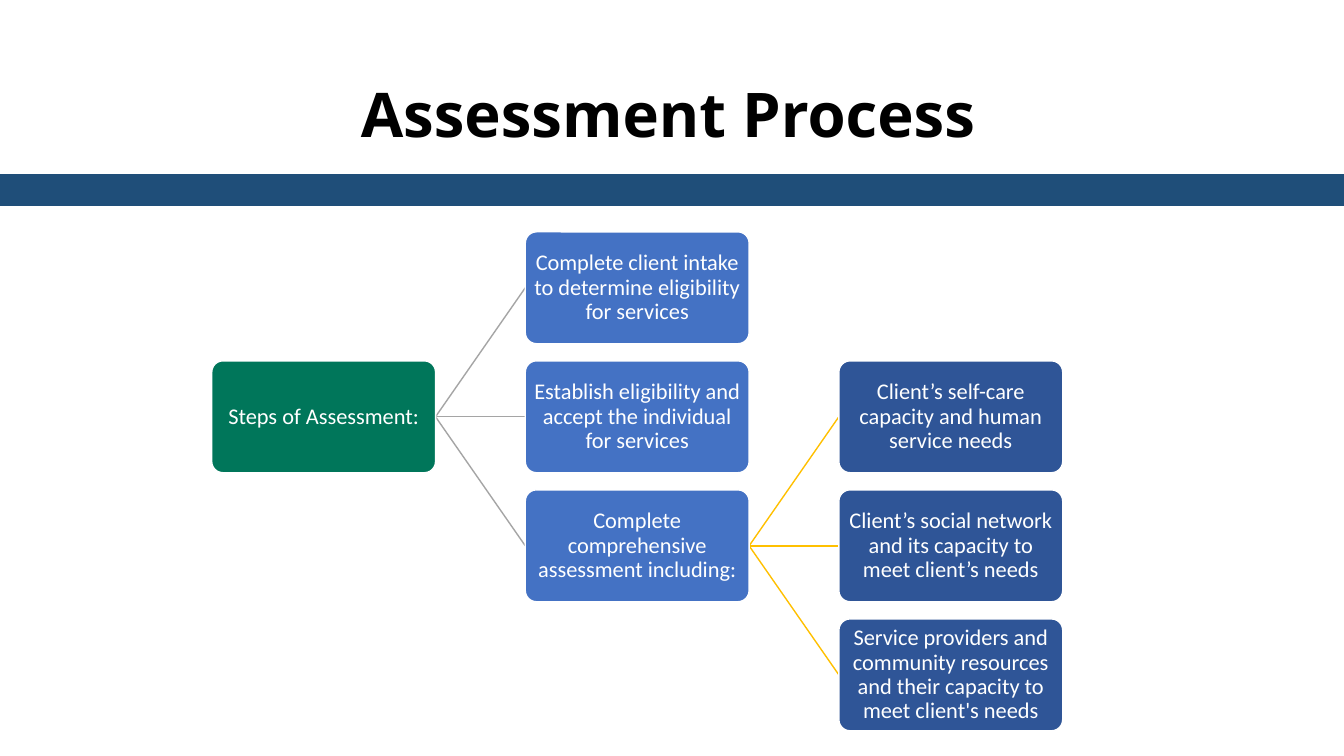
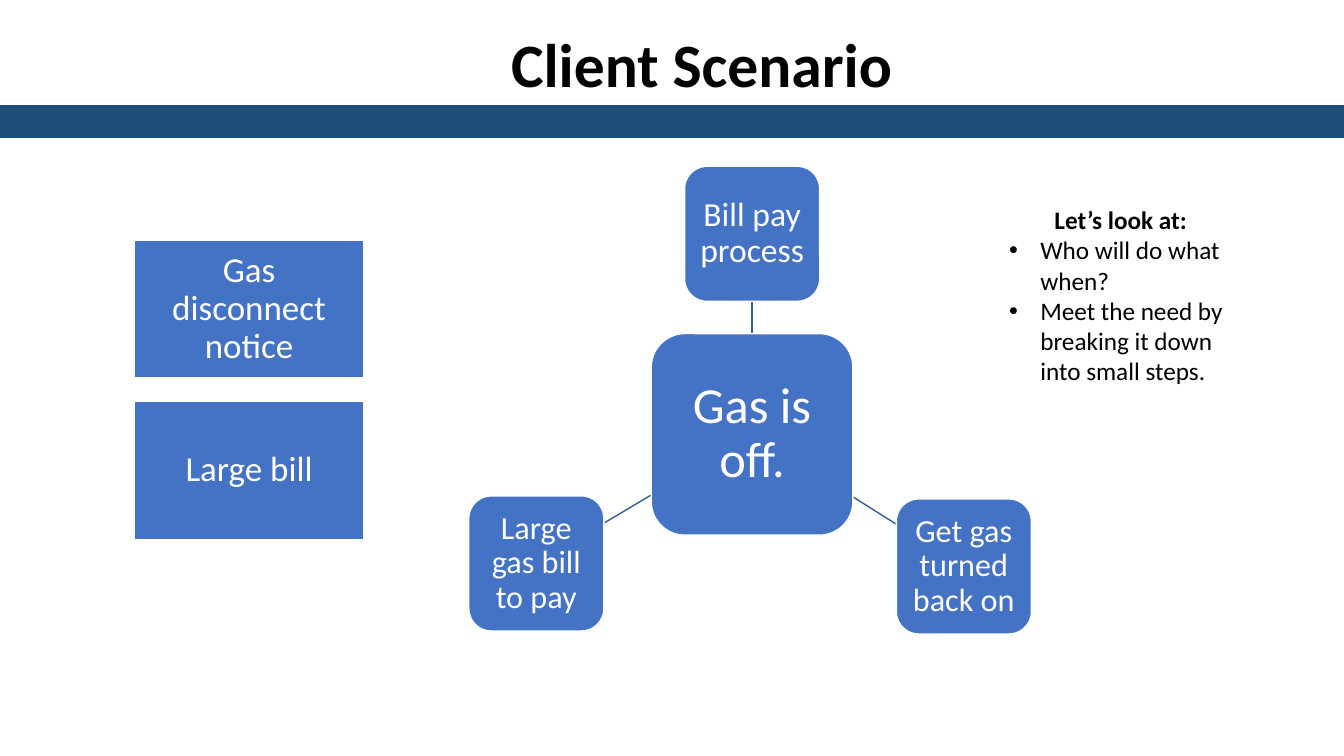
from pptx import Presentation
from pptx.dml.color import RGBColor
from pptx.enum.shapes import MSO_CONNECTOR as Connector, MSO_SHAPE as Preset
from pptx.enum.text import MSO_ANCHOR as Anchor, PP_ALIGN as Align
from pptx.oxml.ns import qn
from pptx.util import Pt
from lxml.etree import SubElement

PX = 9144
SLIDE_WIDTH, SLIDE_HEIGHT = 1333, 750
BAND_HEIGHT = 31
COLORS = {
    "band": "1F4E79", "root": "00765A", "step": "4472C4", "detail": "2F5597",
    "root_link": "A5A5A5", "step_link": "FFC000", "hub_link": "365B9D",
    "white": "FFFFFF", "black": "000000",
}

PROCESS = {"title": "Assessment Process", "font": "Open Sans", "box": (348, 70, 638, 84), "band": 173}
SCENARIO = {"title": "Client Scenario", "font": "Calibri", "box": (497, 21, 431, 84), "band": 105}

TREE_LEFT, TREE_TOP = 210, 230
COLUMN_STEP, ROW_STEP = 311, 128
NODE_WIDTH, NODE_HEIGHT = 222, 111
TREE = [
    ("root", 1, ["Steps of Assessment:"]),
    ("step", 0, ["Complete client intake to determine eligibility for services",
                 "Establish eligibility and accept the individual for services",
                 "Complete comprehensive assessment including:"]),
    ("detail", 1, ["Client’s self-care capacity and human service needs",
                   "Client’s social network and its capacity to meet client’s needs",
                   "Service providers and community resources and their capacity to meet client's needs"]),
]
TREE_LINKS = [("root_link", (0, 1), 1), ("step_link", (1, 2), 2)]

HUB = [
    ("Gas is off.", 646, 331, 200, 36, 10),
    ("Bill pay process", 679, 165, 134, 24, 7),
    ("Get gas turned back on", 889, 495, 134, 23, 6),
    ("Large gas bill to pay", 465, 492, 134, 23, 6),
]
HUB_LINKS = [((746, 331), (746, 299)), ((846, 493), (889, 520)), ((646, 491), (599, 519))]

CAUSES = ["Gas disconnect notice", "Large bill"]
CAUSE_LEFT, CAUSE_TOP, CAUSE_STEP = 133, 238, 160
CAUSE_WIDTH, CAUSE_HEIGHT = 228, 137

NOTE_BOX = (991, 198, 241, 192)
NOTE_INDENT = 31
NOTE_HEADING = "Let’s look at:"
NOTE_POINTS = ["Who will do what when?", "Meet the need by breaking it down into small steps."]


def px(*values):
    return [round(value * PX) for value in values]


def color(name):
    return RGBColor.from_string(COLORS[name])


def apply(target, values):
    for name, value in values.items():
        setattr(target, name, value)


def write(paragraph, text, size, font="Calibri", ink="black", bold=False):
    run = paragraph.add_run()
    run.text = text
    apply(run.font, {"size": Pt(size), "name": font, "bold": bold})
    run.font.color.rgb = color(ink)


def add_block(slide, preset, box, fill, line="white"):
    shape = slide.shapes.add_shape(preset, *px(*box))
    shape.shadow.inherit = False
    shape.fill.solid()
    shape.fill.fore_color.rgb = color(fill)
    shape.line.color.rgb = color(line)
    shape.line.width = Pt(1)
    return shape


def add_node(slide, preset, box, fill, text, size, margin, corner=None):
    shape = add_block(slide, preset, box, fill)
    if corner is not None:
        shape.adjustments[0] = corner
    frame = shape.text_frame
    sides = ("margin_left", "margin_top", "margin_right", "margin_bottom")
    apply(frame, {"word_wrap": True, "vertical_anchor": Anchor.MIDDLE,
                  **dict.fromkeys(sides, px(margin)[0])})
    paragraph = frame.paragraphs[0]
    apply(paragraph, {"alignment": Align.CENTER, "line_spacing": 0.9})
    write(paragraph, text, size, ink="white")


def add_link(slide, start, end, ink):
    link = slide.shapes.add_connector(Connector.STRAIGHT, *px(*start, *end))
    link.line.color.rgb = color(ink)
    link.line.width = Pt(1)
    SubElement(link._element.spPr, qn("a:effectLst"))


def add_text_box(slide, box):
    frame = slide.shapes.add_textbox(*px(*box)).text_frame
    frame.word_wrap = True
    return frame


def add_bullet(paragraph):
    properties = paragraph._p.get_or_add_pPr()
    indent = px(NOTE_INDENT)[0]
    properties.set("marL", str(indent))
    properties.set("indent", str(-indent))
    SubElement(properties, qn("a:buFont")).set("typeface", "Arial")
    SubElement(properties, qn("a:buChar")).set("char", "•")


def start_slide(presentation, heading):
    slide = presentation.slides.add_slide(presentation.slide_layouts[6])
    add_block(slide, Preset.RECTANGLE, (0, heading["band"], SLIDE_WIDTH, BAND_HEIGHT), "band", "band")
    title = add_text_box(slide, heading["box"])
    write(title.paragraphs[0], heading["title"], 44, heading["font"], bold=True)
    return slide


def node_position(column, row):
    return TREE_LEFT + column * COLUMN_STEP, TREE_TOP + row * ROW_STEP


def build_process(presentation):
    slide = start_slide(presentation, PROCESS)
    for ink, parent, child_column in TREE_LINKS:
        left, top = node_position(*parent)
        start = left + NODE_WIDTH, top + NODE_HEIGHT / 2
        _, first_row, children = TREE[child_column]
        for row in range(first_row, first_row + len(children)):
            left, top = node_position(child_column, row)
            add_link(slide, start, (left, top + NODE_HEIGHT / 2), ink)
    for column, (fill, first_row, texts) in enumerate(TREE):
        for row, text in enumerate(texts, first_row):
            box = (*node_position(column, row), NODE_WIDTH, NODE_HEIGHT)
            add_node(slide, Preset.ROUNDED_RECTANGLE, box, fill, text, 16, 1, 0.1)


def build_scenario(presentation):
    slide = start_slide(presentation, SCENARIO)
    for start, end in HUB_LINKS:
        add_link(slide, start, end, "hub_link")
    for text, left, top, side, size, margin in HUB:
        add_node(slide, Preset.ROUNDED_RECTANGLE, (left, top, side, side), "step", text, size, margin)
    for index, text in enumerate(CAUSES):
        box = (CAUSE_LEFT, CAUSE_TOP + index * CAUSE_STEP, CAUSE_WIDTH, CAUSE_HEIGHT)
        add_node(slide, Preset.RECTANGLE, box, "step", text, 25, 10)
    note = add_text_box(slide, NOTE_BOX)
    note.paragraphs[0].alignment = Align.CENTER
    write(note.paragraphs[0], NOTE_HEADING, 18, bold=True)
    for text in NOTE_POINTS:
        paragraph = note.add_paragraph()
        add_bullet(paragraph)
        write(paragraph, text, 18)


def main():
    presentation = Presentation()
    width, height = px(SLIDE_WIDTH, SLIDE_HEIGHT)
    apply(presentation, {"slide_width": width, "slide_height": height})
    build_process(presentation)
    build_scenario(presentation)
    presentation.save("out.pptx")


if __name__ == "__main__":
    main()
